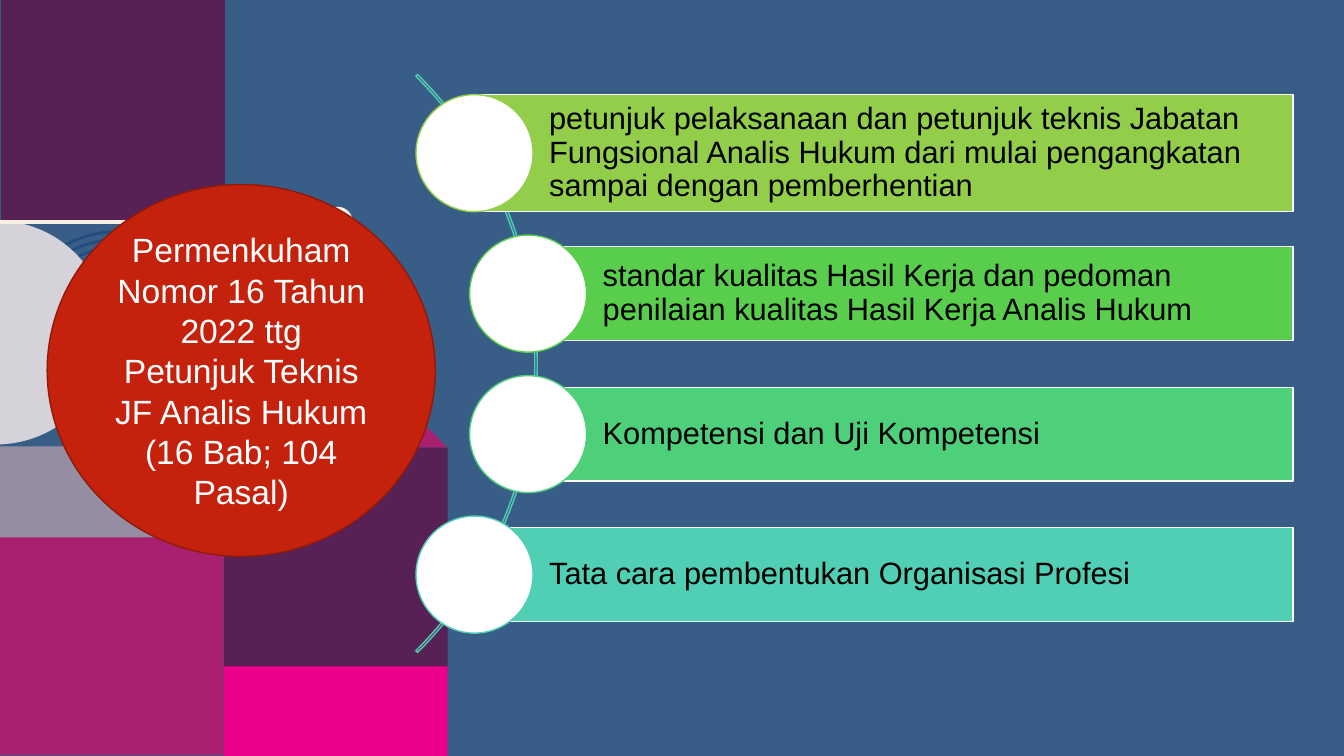
"""Build the slide on the technical guide for legal analysts."""
from math import cos, pi, sin

from lxml import etree
from pptx import Presentation
from pptx.dml.color import RGBColor
from pptx.enum import shapes, text
from pptx.oxml import ns
from pptx.util import Cm, Pt

KIND = shapes.MSO_SHAPE
HUES = {
    "blue": "385E88", "navy": "224E7F", "plum": "582156", "berry": "AA2070",
    "pink": "EC008C", "mauve": "958EA2", "mist": "D5D2DA", "cream": "F8F0E3",
    "lime": "92CE4A", "green": "59CE4C", "mint": "4ECF7A", "teal": "50CFB4",
    "red": "C4220D", "rust": "91190A", "white": "FFFFFF", "black": "000000",
}
TILE = 5.64
DISC = 2.95
RIGHT = 32.59
BARS = [
    ("lime", 11.96, 2.95, "petunjuk pelaksanaan dan petunjuk teknis Jabatan Fungsional "
     "Analis Hukum dari mulai pengangkatan sampai dengan pemberhentian"),
    ("green", 13.31, 2.36, "standar kualitas Hasil Kerja dan pedoman penilaian kualitas "
     "Hasil Kerja Analis Hukum"),
    ("mint", 13.31, 2.36, "Kompetensi dan Uji Kompetensi"),
    ("teal", 11.96, 2.36, "Tata cara pembentukan Organisasi Profesi"),
]
TITLE = ("Permenkuham Nomor 16 Tahun 2022 ttg Petunjuk Teknis JF Analis Hukum\n"
         "(16 Bab; 104 Pasal)")


def hue(name):
    return RGBColor.from_string(HUES[name])


def paint(shape, fill=None, line=None, width=1):
    shape.shadow.inherit = False
    if fill:
        shape.fill.solid()
        shape.fill.fore_color.rgb = hue(fill)
    else:
        shape.fill.background()
    if line:
        shape.line.color.rgb = hue(line)
        shape.line.width = Pt(width)
    else:
        shape.line.fill.background()
    return shape


def draw(slide, kind, x, y, w, h, *style):
    shape = slide.shapes.add_shape(kind, Cm(x), Cm(y), Cm(w), Cm(h))
    return paint(shape, *style)


def write(shape, words, size, color, align, space=1.0):
    frame = shape.text_frame
    frame.text = words
    frame.word_wrap = True
    frame.vertical_anchor = text.MSO_ANCHOR.MIDDLE
    for para in frame.paragraphs:
        para.alignment = align
        para.line_spacing = space
        for run in para.runs:
            run.font.name = "Arial"
            run.font.size = Pt(size)
            run.font.color.rgb = hue(color)
    return frame


def half(slide, x, y, radius, fill):
    turns = [pi * (i / 60 - 0.5) for i in range(61)]
    dots = [(Cm(x + radius * cos(a)), Cm(y + radius * sin(a))) for a in turns]
    form = slide.shapes.build_freeform(*dots[0])
    form.add_line_segments(dots[1:], close=True)
    paint(form.convert_to_shape(), fill)


def rule(slide, x, y, end, color, width):
    line = slide.shapes.add_connector(
        shapes.MSO_CONNECTOR.STRAIGHT, Cm(x), Cm(y), Cm(end), Cm(y))
    line.line.color.rgb = hue(color)
    line.line.width = Pt(width)
    etree.SubElement(line.element.spPr, ns.qn("a:effectLst"))


def decor(slide):
    for kind, x, y, h, fill in [
        (KIND.RECTANGLE, 0.03, 0, TILE, "plum"),
        (KIND.RECTANGLE, 0, 13.39, TILE, "berry"),
        (KIND.RIGHT_TRIANGLE, TILE, TILE, TILE, "berry"),
        (KIND.RECTANGLE, TILE, 2 * TILE, TILE, "plum"),
        (KIND.RECTANGLE, TILE, 16.79, 2.26, "pink"),
        (KIND.RECTANGLE, -0.03, 5.56, TILE, "blue"),
    ]:
        draw(slide, kind, x, y, TILE, h, fill)
    for i in range(13):
        size = 5.33 - 0.4 * i
        draw(slide, KIND.OVAL, 0.28 + 0.2 * i, 5.84 + 0.2 * i, size, size,
             None, "navy", 2)
    draw(slide, KIND.RECTANGLE, 0, 11.25, TILE, 2.29, "mauve")
    half(slide, -0.09, 8.38, 2.82, "mist")
    rule(slide, -0.1, 5.59, 8.28, "cream", 3)
    draw(slide, KIND.OVAL, 8.13, 5.21, 0.76, 0.76, "cream")


def item(slide, mid, color, left, high, words):
    bar = draw(slide, KIND.RECTANGLE, left, mid - high / 2, RIGHT - left, high,
               color, "white")
    frame = write(bar, words, 22, "black", text.PP_ALIGN.LEFT, 0.9)
    frame.margin_left = Cm(1.88)
    frame.margin_top = frame.margin_right = frame.margin_bottom = Cm(0.15)
    draw(slide, KIND.OVAL, left - DISC / 2, mid - DISC / 2, DISC, DISC,
         "white", color)


def main():
    deck = Presentation()
    deck.slide_width, deck.slide_height = Cm(33.87), Cm(19.05)
    slide = deck.slides.add_slide(deck.slide_layouts[6])
    slide.background.fill.solid()
    slide.background.fill.fore_color.rgb = hue("blue")
    decor(slide)
    arc = draw(slide, KIND.BLOCK_ARC, -7.06, -1.14, 20.6, 20.6, None, "teal")
    for i, value in enumerate((189, 27, 0.003)):
        arc.adjustments[i] = value
    for i, bar in enumerate(BARS):
        item(slide, 3.86 + 3.54 * i, *bar)
    oval = draw(slide, KIND.OVAL, 1.19, 4.65, 9.78, 9.37, "red", "rust")
    write(oval, TITLE, 24, "white", text.PP_ALIGN.CENTER)
    deck.save("out.pptx")


if __name__ == "__main__":
    main()
